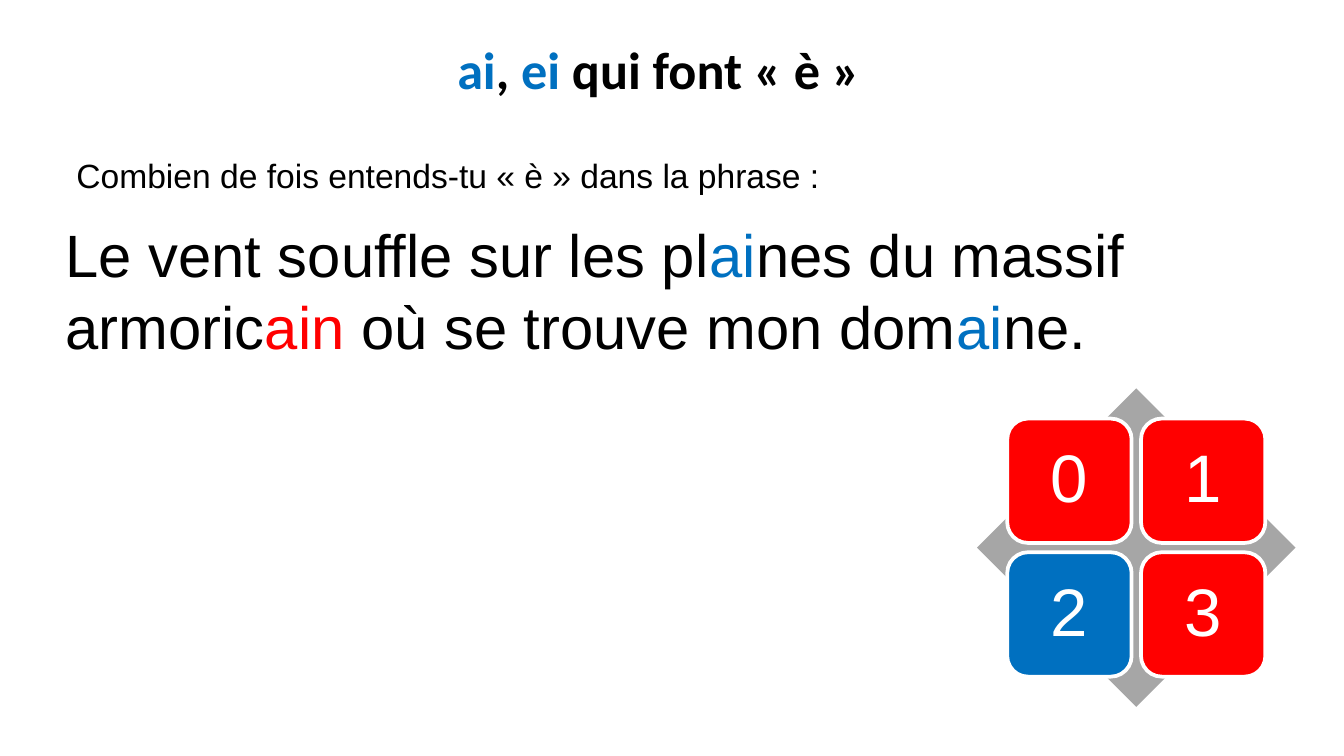
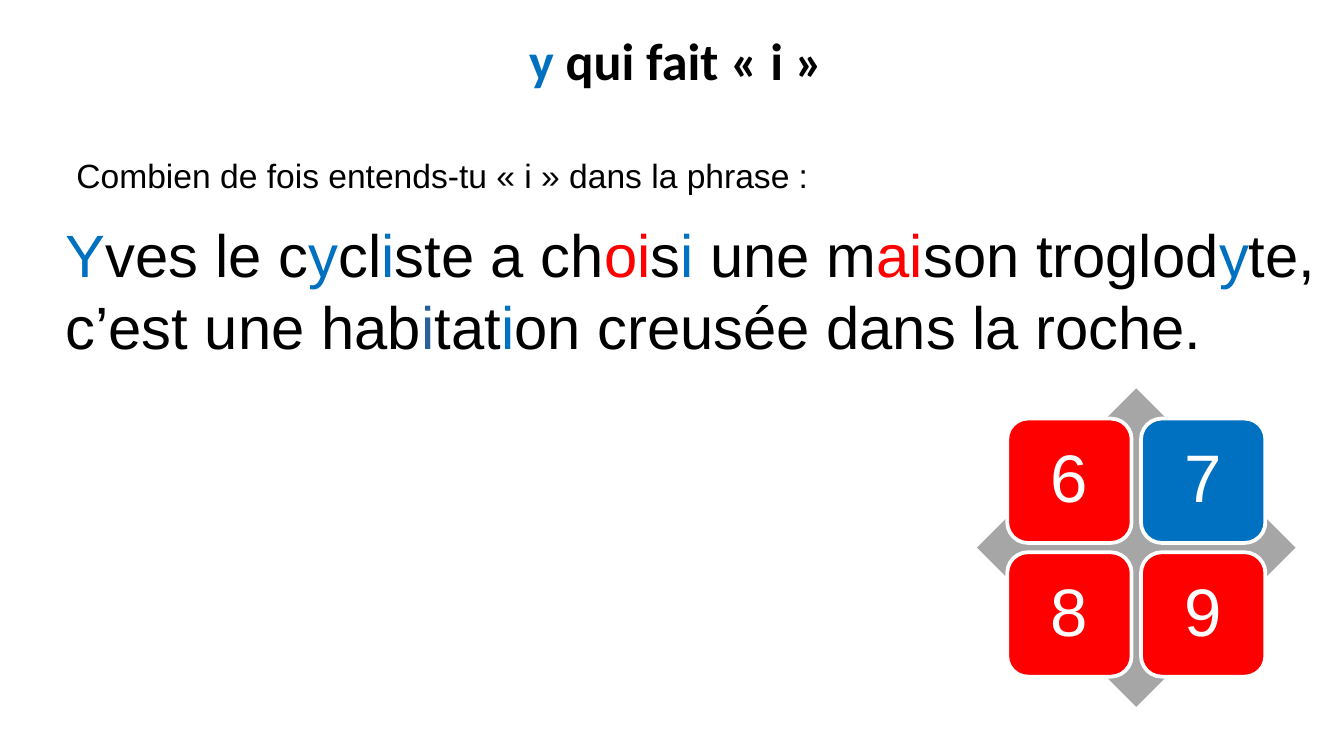
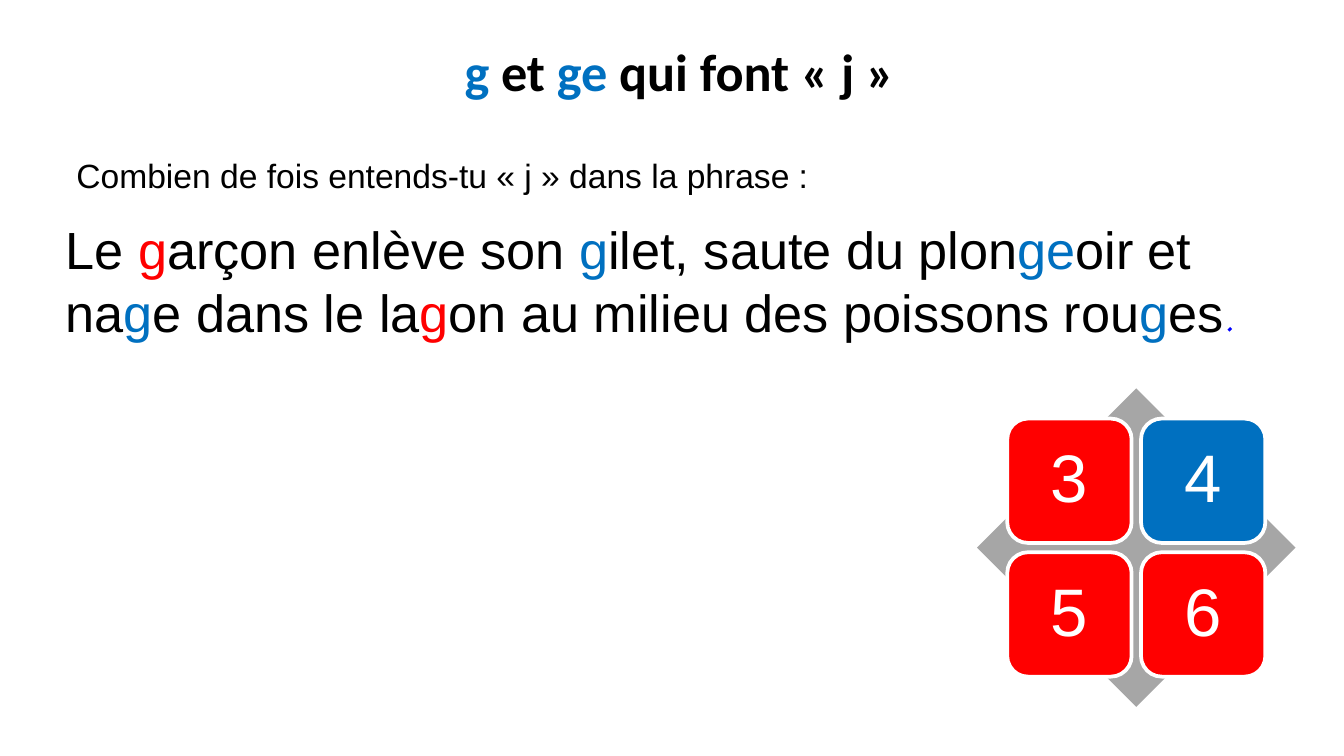
from pptx import Presentation
from pptx.dml.color import RGBColor
from pptx.enum.shapes import MSO_SHAPE
from pptx.enum.text import MSO_ANCHOR, PP_ALIGN
from pptx.util import Pt

PX = 4572
DIAMOND, ROUNDED = MSO_SHAPE.DIAMOND, MSO_SHAPE.ROUNDED_RECTANGLE
LEFT, CENTER = PP_ALIGN.LEFT, PP_ALIGN.CENTER
TOP, MIDDLE = MSO_ANCHOR.TOP, MSO_ANCHOR.MIDDLE

BLACK, WHITE, GREY = "000000", "FFFFFF", "A6A6A6"
BLUE, RED, SLATE, INK = "0070C0", "FF0000", "2A6099", "0000FF"
MARKS = {"+": BLUE, "-": RED, "~": SLATE}

TITLE = {"name": "Calibri", "size": Pt(28), "bold": True}
QUESTION = {"name": "Arial", "size": Pt(18)}
SENTENCE = {"name": "Arial", "size": Pt(32)}
SMALL_SENTENCE = {"name": "Arial", "size": Pt(28)}
ANSWER = {"name": "Arial", "size": Pt(36)}

LESSONS = [
    {
        "title": "+ai|, |+ei |qui font « è »",
        "title_box": (488, 46, 984, 142),
        "sound": "è",
        "sentence": "Le vent souffle sur les pl|+ai|nes du massif armoric|-ain"
                    "| où se trouve mon dom|+ai|ne.",
        "sentence_width": 1952,
        "sentence_font": SENTENCE,
        "answers": (0, 1, 2, 3),
        "correct": 2,
    },
    {
        "title": "+y| qui fait « i »",
        "title_box": (642, 32, 728, 142),
        "sound": "i",
        "sentence": "+Y|ves le c|+y|cl|+i|ste a ch|-oi|s|+i| une m|-ai|son troglod"
                    "|+y|te, c’est une hab|~i|tat|+i|on creusée dans la roche.",
        "sentence_width": 1952,
        "sentence_font": SENTENCE,
        "answers": (6, 7, 8, 9),
        "correct": 7,
    },
    {
        "title": "+g| et |+ge| qui font « j »",
        "title_box": (488, 48, 1046, 142),
        "sound": "j",
        "sentence": "Le |-g|arçon enlève son |+g|ilet, saute du plon|+ge|oir et na"
                    "|+g|e dans le la|-g|on au milieu des poissons rou|+g|es",
        "sentence_width": 1898,
        "sentence_font": SMALL_SENTENCE,
        "answers": (3, 4, 5, 6),
        "correct": 4,
        "full_stop": [(1828, 492), (1830, 490), (1832, 488)],
    },
]


def rgb(value):
    """Turn a hex string into a colour."""
    return RGBColor.from_string(value)


def assign(target, values):
    """Set each named attribute of the target."""
    for key, value in values.items():
        setattr(target, key, value)


class Deck:
    """Hold the presentation style and the current slide."""

    def __init__(self):
        """Open an empty widescreen presentation."""
        self.deck = Presentation()
        assign(self.deck, {"slide_width": 2000 * PX, "slide_height": 1125 * PX})
        self.slide = None

    def new_slide(self):
        """Start a blank slide."""
        self.slide = self.deck.slides.add_slide(self.deck.slide_layouts[6])

    def set_text(self, frame, marked, font, color=BLACK, align=LEFT, anchor=TOP,
                 insets=(20, 10), spacing=None):
        """Fill a text frame, colouring the pieces that begin with a mark."""
        across, down = (inset * PX for inset in insets)
        assign(frame, {"word_wrap": True, "vertical_anchor": anchor,
                       "margin_left": across, "margin_right": across,
                       "margin_top": down, "margin_bottom": down})
        paragraph = frame.paragraphs[0]
        assign(paragraph, {"alignment": align, "line_spacing": spacing})
        for piece in marked.split("|"):
            run = paragraph.add_run()
            run.text = piece[1:] if piece[0] in MARKS else piece
            assign(run.font, font)
            run.font.color.rgb = rgb(MARKS.get(piece[0], color))

    def text(self, box, marked, font, align=LEFT):
        """Add a text box."""
        frame = self.slide.shapes.add_textbox(*(v * PX for v in box)).text_frame
        self.set_text(frame, marked, font, align=align)

    def shape(self, parent, kind, box, fill, line=None):
        """Add a filled preset shape to a group."""
        shape = parent.shapes.add_shape(kind, *(v * PX for v in box))
        shape.shadow.inherit = False
        shape.fill.solid()
        shape.fill.fore_color.rgb = rgb(fill)
        self.outline(shape, line, 2)
        return shape

    def outline(self, shape, color, points):
        """Draw or clear the outline of a shape."""
        if color:
            shape.line.color.rgb = rgb(color)
            shape.line.width = Pt(points)
        else:
            shape.line.fill.background()

    def stroke(self, points):
        """Draw an open pen stroke through the points."""
        builder = self.slide.shapes.build_freeform(*points[0], scale=PX)
        builder.add_line_segments(points[1:], close=False)
        mark = builder.convert_to_shape()
        mark.shadow.inherit = False
        mark.fill.background()
        self.outline(mark, INK, 1.5)

    def answer_grid(self, answers, correct):
        """Lay four answer tiles two by two over a diamond."""
        left, top, side = 1454, 578, 474
        border, tile, pitch = 45, 185, 199
        group = self.slide.shapes.add_group_shape()
        self.shape(group, DIAMOND, (left, top, side, side), GREY)
        for index, answer in enumerate(answers):
            row, column = divmod(index, 2)
            box = (left + border + column * pitch, top + border + row * pitch, tile, tile)
            choice = self.shape(group, ROUNDED, box, BLUE if answer == correct else RED, WHITE)
            self.set_text(choice.text_frame, str(answer), ANSWER, WHITE, CENTER, MIDDLE,
                          (30, 30), 0.9)

    def lesson(self, content):
        """Build one question slide."""
        self.new_slide()
        self.text(content["title_box"], content["title"], TITLE, CENTER)
        self.text((94, 220, 1542, 76),
                  f"Combien de fois entends-tu « {content['sound']} » dans la phrase :", QUESTION)
        self.answer_grid(content["answers"], content["correct"])
        self.text((78, 314, content["sentence_width"], 316),
                  content["sentence"], content["sentence_font"])
        if "full_stop" in content:
            self.stroke(content["full_stop"])


def main():
    """Build every lesson and save the file."""
    quiz = Deck()
    for content in LESSONS:
        quiz.lesson(content)
    quiz.deck.save("out.pptx")


if __name__ == "__main__":
    main()
